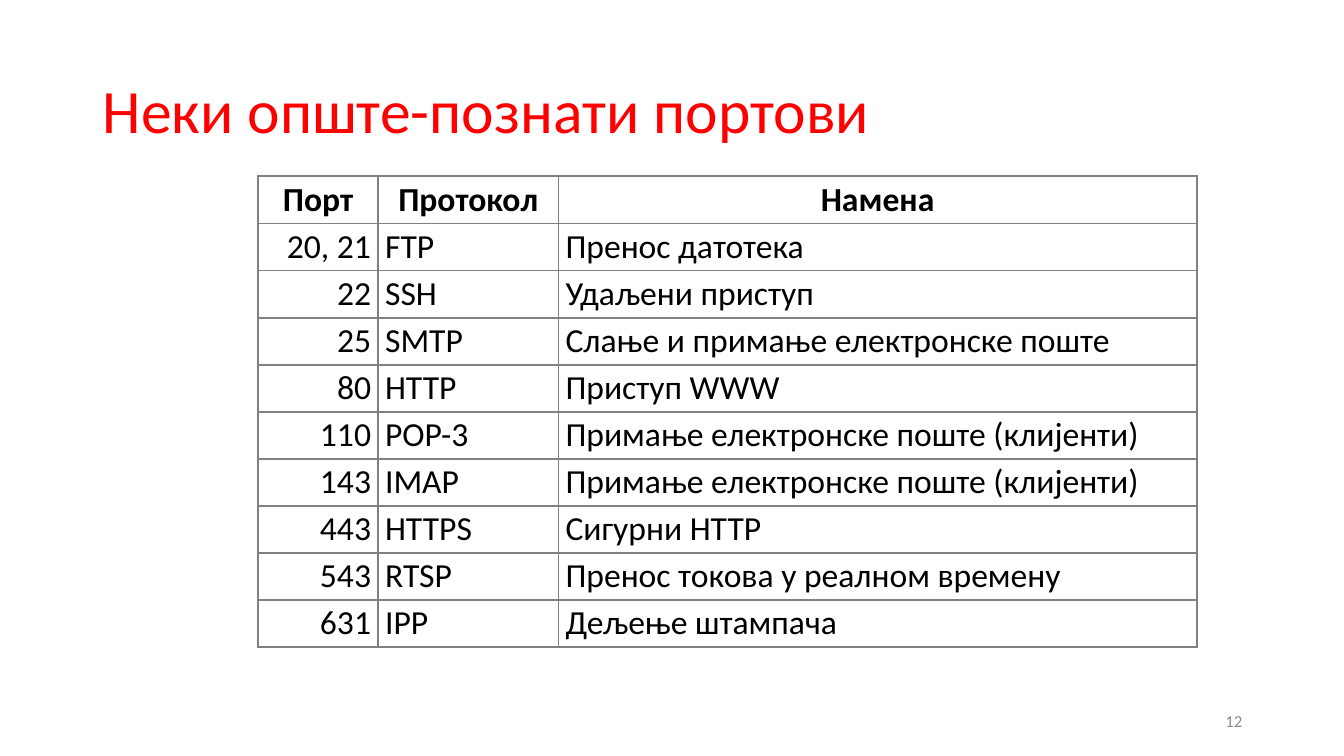
import pptx
import pptx.dml.color
import pptx.enum.text
import pptx.oxml
import pptx.oxml.ns
import pptx.util
from pptx.util import Inches

ALIGN = pptx.enum.text.PP_ALIGN
MIDDLE = pptx.enum.text.MSO_ANCHOR.MIDDLE
GREY = "808080"
COLUMN_WIDTHS = [1.19, 1.79, 6.33]
COLUMN_ALIGNMENTS = [ALIGN.RIGHT, ALIGN.LEFT, ALIGN.LEFT]
ROW_HEIGHT = 0.45
PORTS = [
    ("Порт", "Протокол", "Намена"),
    ("20, 21", "FTP", "Пренос датотека"),
    ("22", "SSH", "Удаљени приступ"),
    ("25", "SMTP", "Слање и примање електронске поште"),
    ("80", "HTTP", "Приступ WWW"),
    ("110", "POP-3", "Примање електронске поште (клијенти)"),
    ("143", "IMAP", "Примање електронске поште (клијенти)"),
    ("443", "HTTPS", "Сигурни HTTP"),
    ("543", "RTSP", "Пренос токова у реалном времену"),
    ("631", "IPP", "Дељење штампача"),
]


def write(text_frame, text, size, color, alignment, bold=False):
    text_frame.text = text
    paragraph = text_frame.paragraphs[0]
    paragraph.alignment = alignment
    font = paragraph.runs[0].font
    font.name = "Calibri"
    font.size = pptx.util.Pt(size)
    font.bold = bold
    font.color.rgb = pptx.dml.color.RGBColor.from_string(color)


def add_borders(cell, color, width):
    """Draw all four sides of a cell; the lines must precede its fill in the XML."""
    properties = cell._tc.get_or_add_tcPr()
    for position, side in enumerate(("lnL", "lnR", "lnT", "lnB")):
        border = pptx.oxml.parse_xml(
            f'<a:{side} {pptx.oxml.ns.nsdecls("a")} w="{pptx.util.Pt(width)}">'
            f'<a:solidFill><a:srgbClr val="{color}"/></a:solidFill></a:{side}>'
        )
        properties.insert(position, border)


presentation = pptx.Presentation()
presentation.slide_width = Inches(13.33)
presentation.slide_height = Inches(7.5)
slide = presentation.slides.add_slide(presentation.slide_layouts[5])

title = slide.shapes.title
title.left, title.top = Inches(0.92), Inches(0.4)
title.width, title.height = Inches(11.5), Inches(1.45)
write(title.text_frame, "Неки опште-познати портови", 44, "FF0000", ALIGN.LEFT)
title.text_frame.vertical_anchor = MIDDLE
title.text_frame.paragraphs[0].line_spacing = 0.9

table = slide.shapes.add_table(
    len(PORTS), len(COLUMN_WIDTHS), Inches(2.56), Inches(1.75),
    Inches(sum(COLUMN_WIDTHS)), Inches(ROW_HEIGHT * len(PORTS)),
).table
table.horz_banding = False
for column, width in zip(table.columns, COLUMN_WIDTHS):
    column.width = Inches(width)

for row_index, row in enumerate(PORTS):
    table.rows[row_index].height = Inches(ROW_HEIGHT)
    is_header = row_index == 0
    for column_index, text in enumerate(row):
        cell = table.cell(row_index, column_index)
        alignment = ALIGN.CENTER if is_header else COLUMN_ALIGNMENTS[column_index]
        write(cell.text_frame, text, 24, "000000", alignment, bold=is_header)
        cell.vertical_anchor = MIDDLE
        cell.margin_left = cell.margin_right = Inches(0.07)
        cell.margin_top = cell.margin_bottom = Inches(0.03)
        cell.fill.background()
        add_borders(cell, GREY, 1.5)

slide_number = slide.shapes.add_textbox(Inches(9.42), Inches(6.95), Inches(3), Inches(0.4))
slide_number.text_frame.word_wrap = True
slide_number.text_frame.vertical_anchor = MIDDLE
write(slide_number.text_frame, "12", 12, "8C8C8C", ALIGN.RIGHT)

presentation.save("out.pptx")
